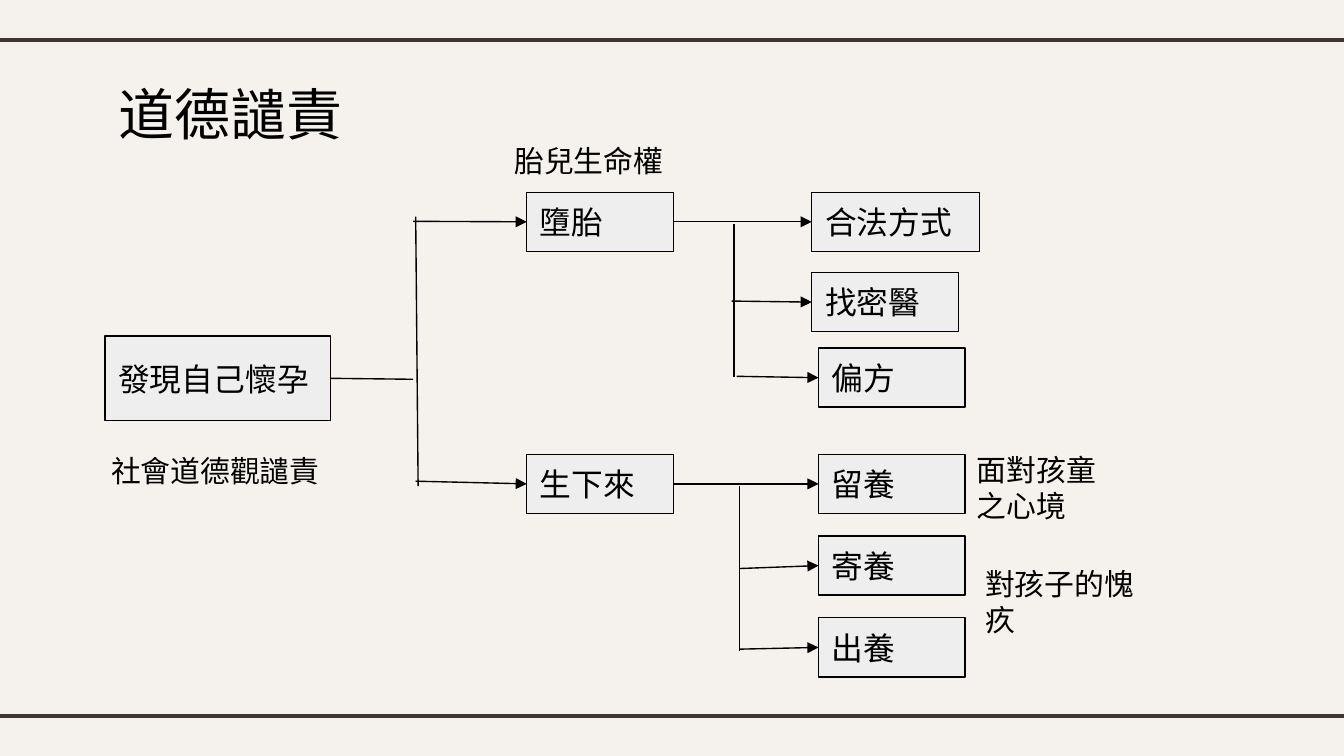
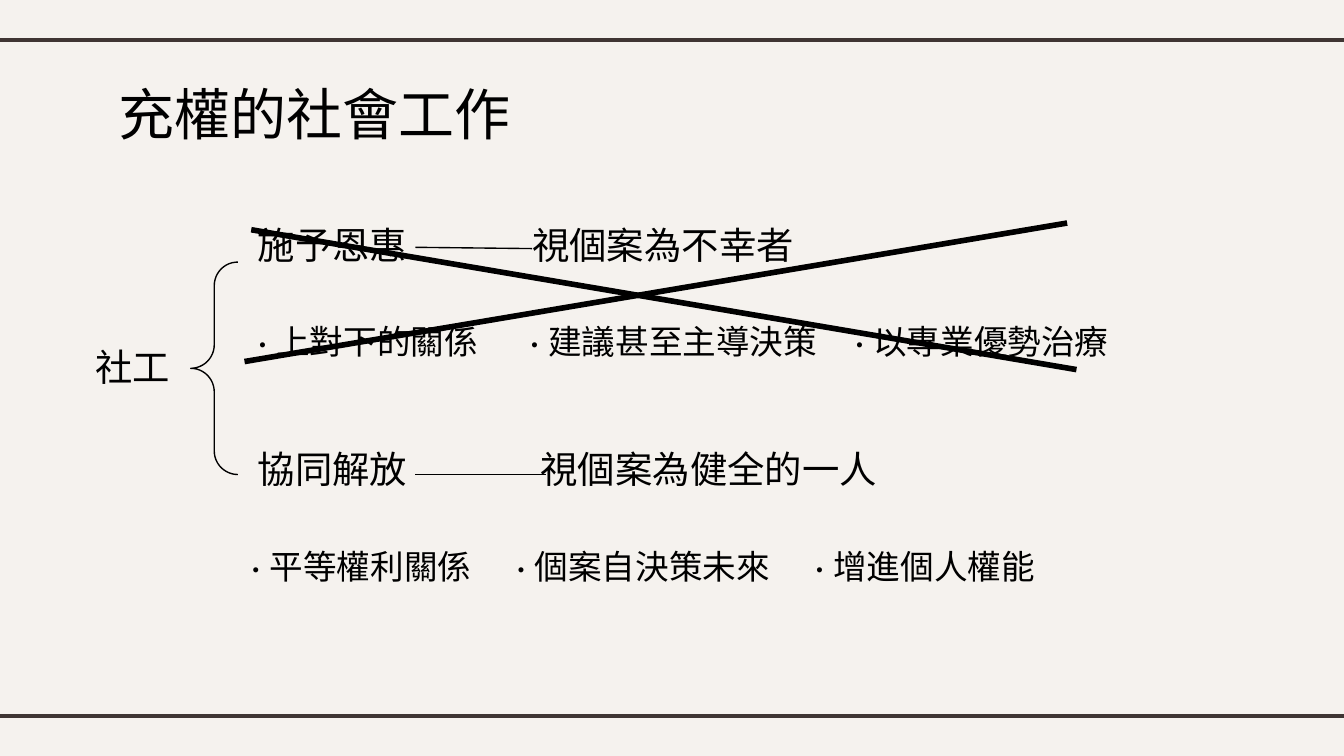
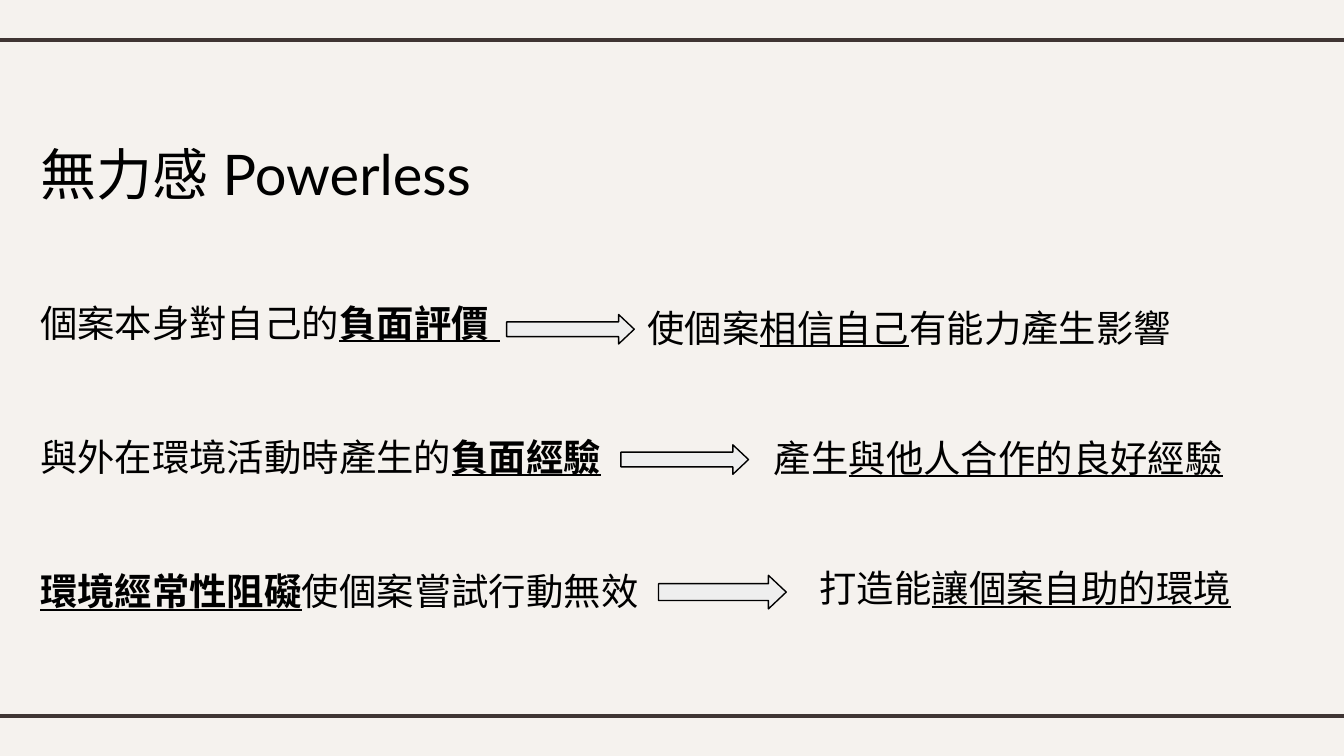
from dataclasses import dataclass

from lxml.etree import SubElement
from pptx import Presentation
from pptx.dml.color import RGBColor
from pptx.enum.shapes import MSO_CONNECTOR as Connector, MSO_SHAPE as Preset
from pptx.enum.text import MSO_ANCHOR as Anchor, MSO_AUTO_SIZE as AutoSize, PP_ALIGN as Align
from pptx.oxml.ns import qn
from pptx.util import Pt

COLORS = {"paper": "F5F2EE", "band": "3F3533", "ink": "000000", "box": "EEEEEE"}
TITLE_FONT, BOX_FONT, NOTE_FONT = "Lato", "Arial", "Montserrat"
WIDTH, HEIGHT = 720, 405
INSET = 7.2
LEFT_SIDE, RIGHT_SIDE = 1, 3
STEP_HEIGHT, STEP_WIDTH = 31.7, 78.5


@dataclass(frozen=True)
class Area:
    left: float
    top: float
    width: float
    height: float

    def lengths(self) -> tuple:
        return Pt(self.left), Pt(self.top), Pt(self.width), Pt(self.height)


@dataclass(frozen=True)
class Span:
    text: str
    marked: bool = False
    bold: bool = False


@dataclass(frozen=True)
class Line:
    spans: tuple[Span, ...]
    tabs: tuple[float, ...] = ()


@dataclass(frozen=True)
class Step:
    name: str
    area: Area


@dataclass(frozen=True)
class Link:
    start: str | tuple[float, float]
    end: str | tuple[float, float]
    arrow: bool = True


@dataclass(frozen=True)
class Note:
    area: Area
    lines: tuple[Line, ...]
    size: float = 20
    gap: float = 0


def color(name: str) -> RGBColor:
    return RGBColor.from_string(COLORS[name])


def plain(text: str, *tabs: float) -> Line:
    return Line((Span(text),), tabs)


def write_text(box, lines: tuple[Line, ...], *, font: str, size: float, gap: float = 0,
               anchor=Anchor.TOP, auto_size=AutoSize.NONE) -> None:
    frame = box.text_frame
    frame.word_wrap = True
    frame.auto_size = auto_size
    frame.vertical_anchor = anchor
    frame.margin_left = frame.margin_right = Pt(INSET)
    frame.margin_top = frame.margin_bottom = Pt(INSET)
    for index, line in enumerate(lines):
        para = frame.add_paragraph() if index else frame.paragraphs[0]
        para.alignment = Align.LEFT
        para.space_before = Pt(gap if index else 0)
        for part in line.spans:
            span = para.add_run()
            span.text = part.text
            span.font.name = font
            span.font.size = Pt(size)
            span.font.bold = part.bold
            span.font.underline = part.marked
            span.font.color.rgb = color("ink")
    for properties in box.element.iter(qn("a:rPr")):
        SubElement(properties, qn("a:ea"), typeface=font)
    for line, properties in zip(lines, box.element.iter(qn("a:pPr"))):
        if line.tabs:
            stops = SubElement(properties, qn("a:tabLst"))
            for position in line.tabs:
                SubElement(stops, qn("a:tab"), pos=str(Pt(position)), algn="l")


def add_line(page, start: tuple[float, float], end: tuple[float, float], *,
             ink: str = "ink", weight: float = 0.75, arrow: bool = False):
    line = page.shapes.add_connector(Connector.STRAIGHT, *map(Pt, start + end))
    line.line.color.rgb = color(ink)
    line.line.width = Pt(weight)
    properties = line.element.spPr
    if arrow:
        SubElement(properties.find(qn("a:ln")), qn("a:tailEnd"), type="triangle")
    SubElement(properties, qn("a:effectLst"))
    return line


def add_outline(page, preset, area: Area, *, filled: bool = True):
    shape = page.shapes.add_shape(preset, *area.lengths())
    shape.shadow.inherit = False
    if filled:
        shape.fill.solid()
        shape.fill.fore_color.rgb = color("box")
    else:
        shape.fill.background()
    shape.line.color.rgb = color("ink")
    shape.line.width = Pt(0.75)
    return shape


def add_step(page, step: Step):
    box = add_outline(page, Preset.RECTANGLE, step.area)
    write_text(box, (plain(step.name),), font=BOX_FONT, size=17, anchor=Anchor.MIDDLE)
    return box


def add_link(page, link: Link, boxes: dict) -> None:
    origin = (0, 0)
    start = origin if link.start in boxes else link.start
    end = origin if link.end in boxes else link.end
    line = add_line(page, start, end, arrow=link.arrow)
    if link.start in boxes:
        line.begin_connect(boxes[link.start], RIGHT_SIDE)
    if link.end in boxes:
        line.end_connect(boxes[link.end], LEFT_SIDE)


def add_note(page, note: Note) -> None:
    box = page.shapes.add_textbox(*note.area.lengths())
    write_text(box, note.lines, font=NOTE_FONT, size=note.size, gap=note.gap,
               auto_size=AutoSize.SHAPE_TO_FIT_TEXT)


def add_page(deck, title: str, left: float = 56.2, top: float = 35.3):
    page = deck.slides.add_slide(deck.slide_layouts[5])
    box = page.shapes.title
    box.left, box.top, box.width, box.height = Area(left, top, 607.7, 45.4).lengths()
    write_text(box, (plain(title),), font=TITLE_FONT, size=30)
    return page


def add_bands(deck, page) -> None:
    layout = page.slide_layout
    for number, height in enumerate((21.6, 383.8)):
        band = add_line(page, (-5.8, height), (WIDTH + 5.8, height), ink="band", weight=2.25)
        band.element.nvCxnSpPr.cNvPr.id = 100 + number
        layout.shapes.element.append(band.element)
    fill = deck.slide_master.background.fill
    fill.solid()
    fill.fore_color.rgb = color("paper")


def build_choices(deck) -> None:
    page = add_page(deck, "道德譴責")
    add_bands(deck, page)
    places = (
        ("生下來", 282.2, 243.4, STEP_WIDTH),
        ("墮胎", 282.2, 103, STEP_WIDTH),
        ("合法方式", 434.9, 103, 90),
        ("找密醫", 434.9, 146, STEP_WIDTH),
        ("偏方", 438.5, 186.5, STEP_WIDTH),
        ("寄養", 438.5, 287.2, STEP_WIDTH),
        ("留養", 438.5, 243.4, STEP_WIDTH),
        ("出養", 438.5, 331, STEP_WIDTH),
    )
    steps = [Step("發現自己懷孕", Area(56.2, 180, 121, 45.4))]
    steps += [Step(name, Area(left, top, width, STEP_HEIGHT)) for name, left, top, width in places]
    boxes = {step.name: add_step(page, step) for step in steps}
    links = (
        Link("發現自己懷孕", (221.3, 203.2), arrow=False),
        Link((222.7, 116), (224, 260.5), arrow=False),
        Link((221.3, 118.6), "墮胎"),
        Link((222.7, 257.8), "生下來"),
        Link("墮胎", "合法方式"),
        Link((393.2, 119.8), (393.2, 201.8), arrow=False),
        Link((392, 161.3), "找密醫"),
        Link((394.6, 201.6), "偏方"),
        Link("生下來", "留養"),
        Link((396, 260.5), (396, 349), arrow=False),
        Link((396, 304.6), "寄養"),
        Link((396, 347.8), "出養"),
    )
    for link in links:
        add_link(page, link, boxes)
    remarks = (
        ("社會道德觀譴責", Area(52.4, 235.4, 128.9, 33.6)),
        ("胎兒生命權", Area(268.4, 69.1, 106.6, 33.6)),
        ("面對孩童之心境", Area(516.2, 234.7, 90, 53.3)),
        ("對孩子的愧疚", Area(520.6, 295.9, 106.6, 53.3)),
    )
    for text, area in remarks:
        add_note(page, Note(area, (plain(text),), size=16))


def build_empowerment(deck) -> None:
    page = add_page(deck, "充權的社會工作")
    add_note(page, Note(Area(43.9, 177.1, 576, 38.9), (plain("社工"),)))
    brace = add_outline(page, Preset.LEFT_BRACE, Area(102.2, 140.4, 25.2, 113.8), filled=False)
    brace.adjustments[0] = brace.adjustments[1] = 0.5
    approaches = (
        plain("施予恩惠\t視個案為不幸者", 147),
        plain("協同解放\t視個案為健全的一人", 151.5),
    )
    add_note(page, Note(Area(131, 111.6, 491.8, 160.6), approaches, gap=96))
    add_line(page, (222.5, 132.5), (285.1, 133.2))
    add_line(page, (222.5, 254.2), (292.3, 254.2))
    traits = (
        (131, 164.9, plain("• 上對下的關係\t• 建議甚至主導決策\t• 以專業優勢治療", 145.7, 319.8)),
        (127.4, 285.1, plain("• 平等權利關係\t• 個案自決策未來\t• 增進個人權能", 142, 302)),
    )
    for left, top, line in traits:
        add_note(page, Note(Area(left, top, 563.8, 58.3), (line,), size=18))
    add_line(page, (134.6, 123.1), (576.7, 198), weight=3)
    add_line(page, (131, 193.7), (571.7, 119.5), weight=3)


def build_powerless(deck) -> None:
    page = add_page(deck, "無力感 Powerless", 14.4, 67.7)
    causes = (
        Line((Span("個案本身對自己的"), Span("負面評價 ", True, True))),
        Line((Span("與外在環境活動時產生的"), Span("負面經驗", True, True))),
        Line((Span("環境經常性阻礙", True, True), Span("使個案嘗試行動無效"))),
    )
    add_note(page, Note(Area(14.4, 153.4, 576, 184.3), causes, gap=48))
    for left, top, height in ((271.4, 168.5, 15.8), (332.6, 238.3, 15.8), (352.8, 308.2, 18)):
        arrow = add_outline(page, Preset.RIGHT_ARROW, Area(left, top, 68.4, height))
        arrow.adjustments[0], arrow.adjustments[1] = 0.5, 0.53
    remedies = (
        (339.8, 489.6, (Span("使個案"), Span("相信自己", True), Span("有能力產生影響"))),
        (407.5, 270.7, (Span("產生"), Span("與他人合作的良好經驗", True))),
        (432, 576, (Span("打造能"), Span("讓個案自助的環境", True))),
    )
    for row, (left, width, spans) in enumerate(remedies):
        area = Area(left, 156.2 + 69.8 * row, width, 38.9)
        add_note(page, Note(area, (Line(spans),)))


def main() -> None:
    deck = Presentation()
    deck.slide_width, deck.slide_height = Pt(WIDTH), Pt(HEIGHT)
    build_choices(deck)
    build_empowerment(deck)
    build_powerless(deck)
    deck.save("out.pptx")


if __name__ == "__main__":
    main()
